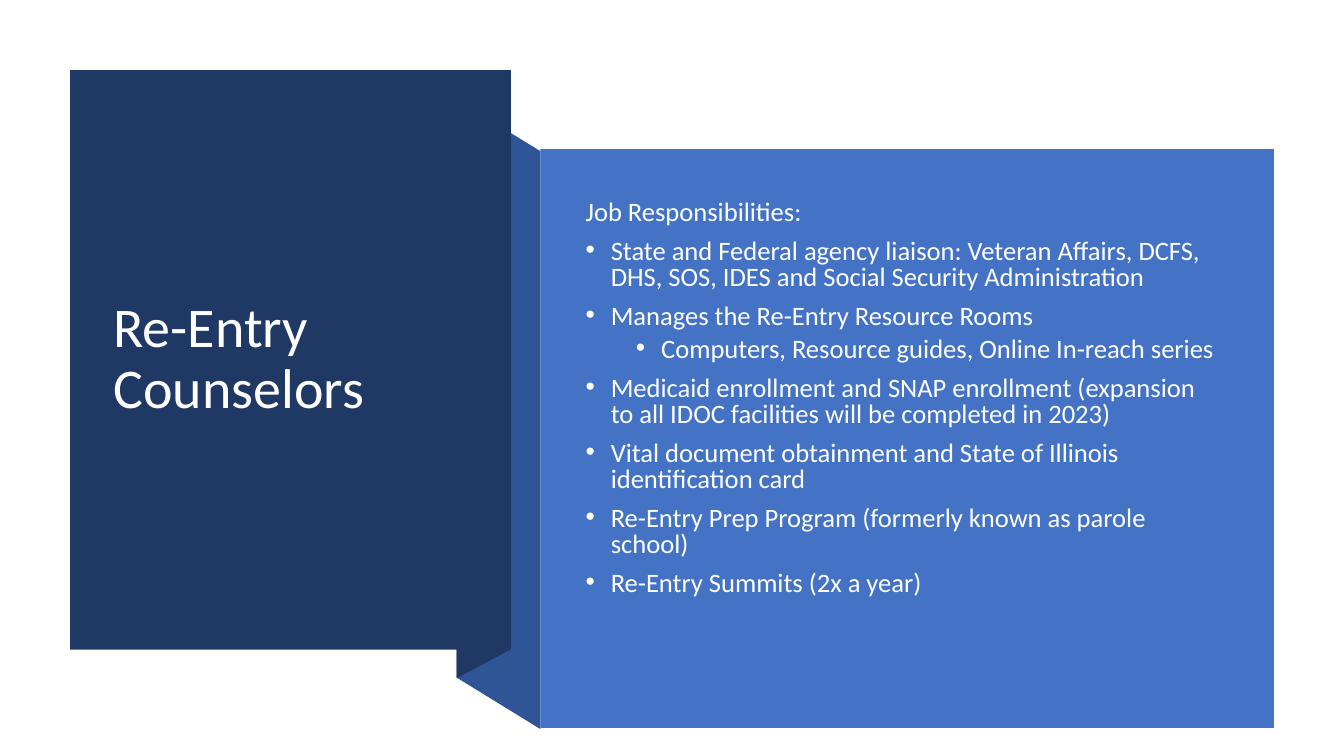
from dataclasses import dataclass

from lxml.etree import SubElement
from pptx import Presentation
from pptx.dml.color import RGBColor
from pptx.enum.shapes import MSO_SHAPE as Preset
from pptx.enum.text import MSO_ANCHOR as Anchor
from pptx.oxml.ns import qn
from pptx.util import Pt


@dataclass(frozen=True)
class Theme:
    navy: RGBColor = RGBColor(0x20, 0x38, 0x64)
    fold: RGBColor = RGBColor(0x2F, 0x55, 0x97)
    blue: RGBColor = RGBColor(0x44, 0x72, 0xC4)
    title_color: RGBColor = RGBColor(0xFF, 0xFF, 0xFF)
    body_color: RGBColor = RGBColor(0xFE, 0xFF, 0xFF)
    font: str = "Calibri"
    title_size: Pt = Pt(40)
    body_size: Pt = Pt(19)


theme = Theme()
presentation = Presentation()
presentation.slide_width, presentation.slide_height = Pt(960), Pt(540)
slide = presentation.slides.add_slide(presentation.slide_layouts[6])


def paint(shape, color):
    shape.shadow.inherit = False
    shape.fill.solid()
    shape.fill.fore_color.rgb = color
    shape.line.fill.background()


def add_text_frame(left, top, width, height, anchor):
    box = slide.shapes.add_textbox(Pt(left), Pt(top), Pt(width), Pt(height))
    frame = box.text_frame
    frame.word_wrap = True
    frame.vertical_anchor = anchor
    return frame


ribbon_folds = [
    ([(386, 520.8), (326.2, 484), (326.2, 71.3), (386, 108)], theme.fold),
    ([(364.5, 464), (326.2, 484.5), (326.2, 70.5), (364.5, 49.8)], theme.navy),
]
for points, color in ribbon_folds:
    corners = [(Pt(x), Pt(y)) for x, y in points]
    builder = slide.shapes.build_freeform(*corners[0])
    builder.add_line_segments(corners[1:], close=True)
    paint(builder.convert_to_shape(), color)

panels = [
    ((50, 50, 315, 414), theme.navy),
    ((386, 106.6, 524, 413.4), theme.blue),
]
for bounds, color in panels:
    panel = slide.shapes.add_shape(Preset.RECTANGLE, *map(Pt, bounds))
    paint(panel, color)

title_frame = add_text_frame(74, 77.3, 267, 359.3, Anchor.MIDDLE)
title = title_frame.paragraphs[0]
title.text = "Re-Entry Counselors"
title.line_spacing = 0.9
title.font.name = theme.font
title.font.size = theme.title_size
title.font.color.rgb = theme.title_color

responsibilities = [
    ("Job Responsibilities:", None),
    ("State and Federal agency liaison: Veteran Affairs, DCFS, DHS, SOS, IDES "
     "and Social Security Administration", 0),
    ("Manages the Re-Entry Resource Rooms", 0),
    ("Computers, Resource guides, Online In-reach series", 1),
    ("Medicaid enrollment and SNAP enrollment (expansion to all IDOC facilities "
     "will be completed in 2023)", 0),
    ("Vital document obtainment and State of Illinois identification card", 0),
    ("Re-Entry Prep Program (formerly known as parole school)", 0),
    ("Re-Entry Summits (2x a year)", 0),
]
body_frame = add_text_frame(411.2, 143.3, 468.7, 333.3, Anchor.TOP)
body_frame.margin_top = 0
for index, (text, level) in enumerate(responsibilities):
    paragraph = body_frame.add_paragraph() if index else body_frame.paragraphs[0]
    paragraph.text = text
    paragraph.line_spacing = 0.8
    paragraph.space_before = Pt(0 if index == 0 else 5 if level else 10)
    if level is not None:
        paragraph.level = level
        properties = paragraph._p.get_or_add_pPr()
        properties.set("marL", str(Pt(18 + 36 * level)))
        properties.set("indent", str(Pt(-18)))
        SubElement(properties, qn("a:buFont"), typeface="Arial")
        SubElement(properties, qn("a:buChar"), char="•")
    paragraph.font.name = theme.font
    paragraph.font.size = theme.body_size
    paragraph.font.color.rgb = theme.body_color

presentation.save("out.pptx")
